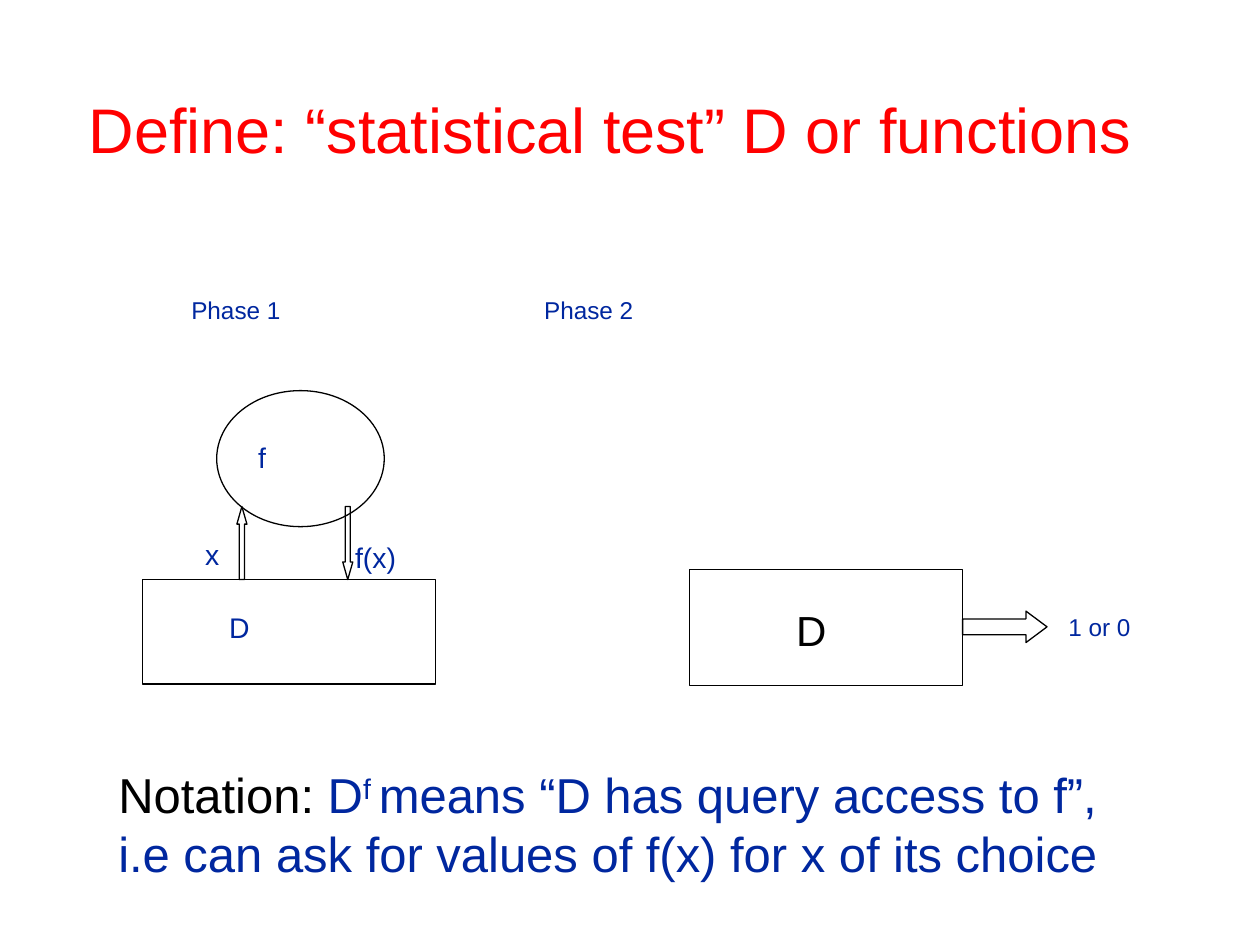
from pptx import Presentation
from pptx.dml.color import RGBColor
from pptx.enum import shapes, text
from pptx.oxml import parse_xml
from pptx.oxml.ns import nsdecls
from pptx.util import Inches, Pt

RED = RGBColor(0xFF, 0x00, 0x00)
BLUE = RGBColor(0x00, 0x27, 0x9F)
BLACK = RGBColor(0x00, 0x00, 0x00)
SHAPE = shapes.MSO_SHAPE


def style(p, size, color):
    """Set the font of a paragraph."""
    p.font.name = "Arial"
    p.font.size = Pt(size)
    p.font.color.rgb = color


def raise_run(r):
    """Turn a run into superscript."""
    r.font._element.set("baseline", "30000")


def add_outline(s, kind, x, y, w, h, head=None):
    """Add an unfilled black outline, with an optional arrowhead ratio."""
    sp = s.shapes.add_shape(kind, Inches(x), Inches(y), Inches(w), Inches(h))
    sp.shadow.inherit = False
    sp.fill.background()
    sp.line.color.rgb = BLACK
    sp.line.width = Pt(0.75)
    if head:
        sp.adjustments[0] = 0.5
        sp.adjustments[1] = head
    return sp


def add_label(s, words, x, y, w, h, size, color=BLUE, raised=True):
    """Add a one-line label and return its paragraph."""
    tf = s.shapes.add_textbox(Inches(x), Inches(y), Inches(w), Inches(h)).text_frame
    tf.word_wrap = True
    p = tf.paragraphs[0]
    style(p, size, color)
    r = p.add_run()
    r.text = words
    if raised:
        raise_run(r)
    return p


def add_title(s, x, y, w, h):
    """Place and format the title placeholder."""
    sp = s.shapes.title
    sp.left, sp.top, sp.width, sp.height = map(Inches, (x, y, w, h))
    tf = sp.text_frame
    tf.text = "Define: “statistical test” D or functions"
    tf.vertical_anchor = text.MSO_ANCHOR.MIDDLE
    p = tf.paragraphs[0]
    p.alignment = text.PP_ALIGN.CENTER
    style(p, 36, RED)


def add_phase_names(s, x, y, w, h):
    """Write both phase names on one line, parted by a tab stop."""
    p = add_label(s, "Phase 1\tPhase 2", x, y, w, h, 24)
    stops = parse_xml(f'<a:tabLst {nsdecls("a")}><a:tab pos="{Inches(2.8)}" algn="l"/></a:tabLst>')
    p._p.get_or_add_pPr().insert(0, stops)


def add_query_phase(s, x, y, w, h):
    """Draw D querying the function f."""
    box_y = y + 1.5
    add_outline(s, SHAPE.RECTANGLE, x, box_y, w, h - 1.5)
    add_outline(s, SHAPE.OVAL, x + 0.59, y, 1.33, 1.08)
    add_label(s, "f", x + 0.82, y + 0.3, 0.31, 0.57, 28)
    add_label(s, "D", x + 0.59, box_y + 0.15, 1.17, 0.57, 28)
    add_label(s, "x", x + 0.4, box_y - 0.43, 0.33, 0.42, 28)
    add_label(s, "f(x)", x + 1.59, box_y - 0.41, 0.58, 0.42, 28)
    for kind, dx in ((SHAPE.UP_ARROW, 0.75), (SHAPE.DOWN_ARROW, 1.59)):
        add_outline(s, kind, x + dx, box_y - 0.58, 0.08, 0.58, 1.75)


def add_answer_phase(s, x, y, w, h):
    """Draw D giving its one-bit answer."""
    add_outline(s, SHAPE.RECTANGLE, x, y, w, h)
    add_label(s, "D", x + 0.75, y + 0.23, 0.54, 0.5, 24, BLACK, raised=False)
    add_outline(s, SHAPE.RIGHT_ARROW, x + w, y + 0.33, 0.67, 0.25, 0.67)
    add_label(s, "1 or 0", x + w + 0.74, y + 0.25, 1.09, 0.5, 24)


def add_notation(s, x, y, w, h):
    """Write the note on notation."""
    tf = s.shapes.add_textbox(Inches(x), Inches(y), Inches(w), Inches(h)).text_frame
    tf.word_wrap = True
    p = tf.paragraphs[0]
    style(p, 28, BLUE)
    label, _, power, _ = runs = [p.add_run() for _ in range(4)]
    for r, words in zip(runs, ("Notation:", " D", "f ", "means “D has query access to f”,")):
        r.text = words
    label.font.color.rgb = BLACK
    raise_run(power)
    p = tf.add_paragraph()
    p.text = "i.e can ask for values of f(x) for x of its choice"
    style(p, 28, BLUE)


def main():
    """Build the slide and save it."""
    prs = Presentation()
    prs.slide_width, prs.slide_height = Inches(10), Inches(7.5)
    s = prs.slides.add_slide(prs.slide_layouts[5])
    add_title(s, 0.22, -0.11, 9.25, 2.25)
    add_phase_names(s, 1.42, 2.25, 7.83, 0.5)
    add_query_phase(s, 1.13, 3.1, 2.33, 2.33)
    add_answer_phase(s, 5.47, 4.52, 2.17, 0.92)
    add_notation(s, 0.84, 6.02, 8.32, 1.04)
    prs.save("out.pptx")


if __name__ == "__main__":
    main()
